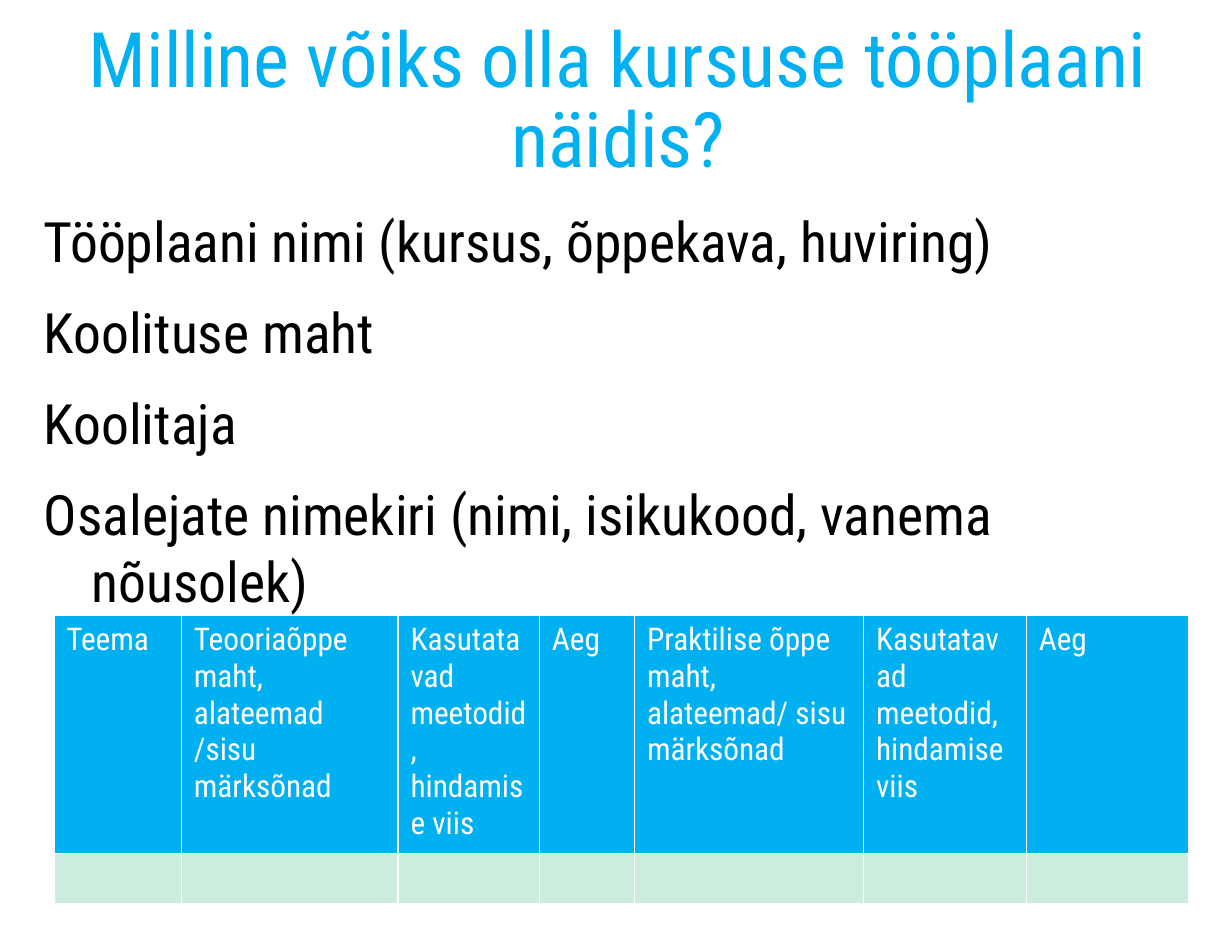
from lxml.etree import SubElement as Sub
from pptx import Presentation
from pptx.dml.color import RGBColor
from pptx.enum.text import MSO_ANCHOR as Anchor, PP_ALIGN as Align
from pptx.oxml.ns import qn
from pptx.util import Cm, Pt

PX = 9144
FACE = "Roboto Condensed"
BLUE, MINT, WHITE, BLACK = "00B0F0", "CCECDE", "FFFFFF", "000000"
TITLE = "Milline võiks olla kursuse tööplaani näidis?"
ITEMS = [
    "Tööplaani nimi (kursus, õppekava, huviring)",
    "Koolituse maht",
    "Koolitaja",
    "Osalejate nimekiri (nimi, isikukood, vanema nõusolek)",
]
METHODS = "Kasutatavad meetodid, hindamise viis"
COLS = [
    ("Teema", 102),
    ("Teooriaõppe maht, alateemad /sisu märksõnad", 173),
    (METHODS, 113),
    ("Aeg", 76),
    ("Praktilise õppe maht, alateemad/ sisu märksõnad", 183),
    (METHODS, 130),
    ("Aeg", 130),
]
ROWS = [190, 40]


def px(*sizes):
    return [size * PX for size in sizes]


def color(code):
    return RGBColor.from_string(code)


def style(para, size, code):
    font = para.font
    font.name, font.size, font.bold = FACE, Pt(size), False
    font.color.rgb = color(code)


def add_text(slide, box):
    frame = slide.shapes.add_textbox(*px(*box)).text_frame
    frame.word_wrap = True
    frame.margin_left = frame.margin_top = 0
    frame.margin_right = frame.margin_bottom = 0
    return frame


def add_title(slide, box):
    frame = add_text(slide, box)
    frame.vertical_anchor = Anchor.MIDDLE
    para = frame.paragraphs[0]
    para.text = TITLE
    para.alignment = Align.CENTER
    para.line_spacing = 0.88
    style(para, 44, BLUE)


def add_list(slide, box):
    frame = add_text(slide, box)
    frame.text = "\n".join(ITEMS)
    for para in frame.paragraphs:
        style(para, 32, BLACK)
        para.space_after = Pt(14.1)
        props = para._p.get_or_add_pPr()
        indent = 38 * PX
        props.set("marL", str(indent))
        props.set("indent", str(-indent))


def add_edges(cell):
    props = cell._tc.get_or_add_tcPr()
    for side in "LRTB":
        line = Sub(props, qn(f"a:ln{side}"), w=str(Pt(1)))
        fill = Sub(line, qn("a:solidFill"))
        Sub(fill, qn("a:srgbClr"), val=WHITE)


def add_cell(cell, text, fill):
    add_edges(cell)
    cell.fill.solid()
    cell.fill.fore_color.rgb = color(fill)
    cell.text = text
    style(cell.text_frame.paragraphs[0], 18, WHITE)


def add_plan(slide, left, top):
    box = (left, top, sum(wide for _, wide in COLS), sum(ROWS))
    table = slide.shapes.add_table(len(ROWS), len(COLS), *px(*box)).table
    table.horz_banding = False
    for row, high in zip(table.rows, ROWS):
        row.height = high * PX
    for col, (head, wide) in enumerate(COLS):
        table.columns[col].width = wide * PX
        add_cell(table.cell(0, col), head, BLUE)
        add_cell(table.cell(1, col), "", MINT)


def main():
    deck = Presentation()
    deck.slide_width = Cm(25)
    deck.slide_height = Cm(19)
    slide = deck.slides.add_slide(deck.slide_layouts[6])
    add_title(slide, (51, 20, 886, 125))
    add_list(slide, (35, 165, 929, 583))
    add_plan(slide, 43, 492)
    deck.save("out.pptx")


if __name__ == "__main__":
    main()
